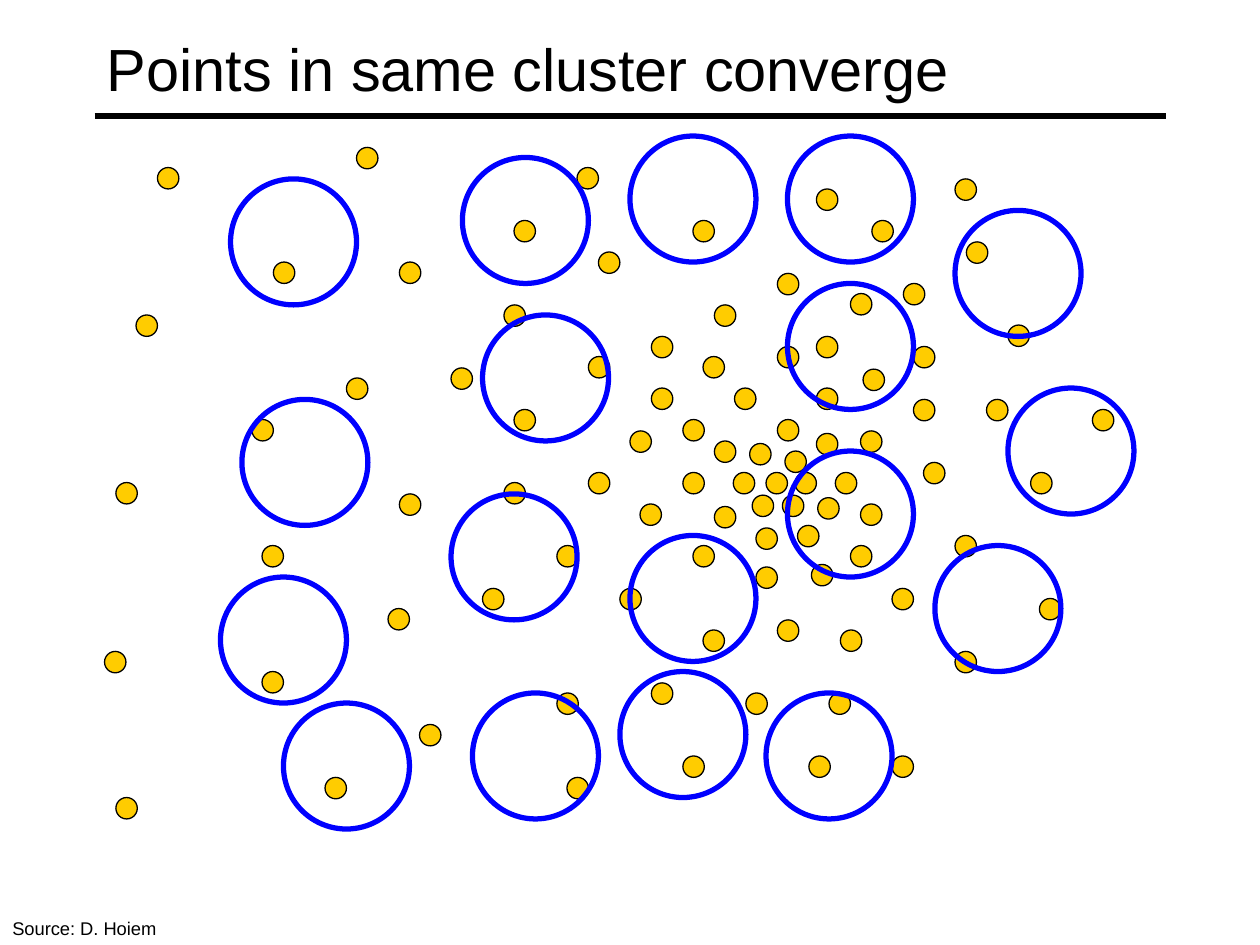
from lxml.etree import SubElement
from pptx import Presentation
from pptx.dml.color import RGBColor
from pptx.enum.shapes import MSO_CONNECTOR, MSO_SHAPE
from pptx.enum.text import MSO_ANCHOR
from pptx.oxml.ns import qn
from pptx.util import Inches, Pt

COLORS = {"ink": "000000", "point": "FFCC00", "window": "0000FF"}
FONT = "Arial"
POINT_SIZE = 0.17
WINDOW_SIZE = 1

# Top left corners of the data points, in inches
POINTS = [
    # Dense core
    (6.08, 3.75), (6.31, 3.75), (6.23, 3.58), (5.95, 3.52), (6.21, 3.93),
    (5.97, 3.93), (6.49, 3.95), (5.82, 3.75), (6.63, 3.75), (6.48, 3.44),
    (6.17, 3.33), (6.33, 4.17), (6, 4.19), (5.67, 4.02), (5.42, 3.75),
    (5.67, 3.5), (6.83, 4), (6.75, 4.33), (6.44, 4.48), (6, 4.5),
    # Ring around the core
    (5.5, 4.33), (5.08, 4), (5, 3.42), (5.42, 3.33), (5.83, 3.08),
    (6.48, 3.08), (6.17, 2.75), (5.17, 3.08), (5.58, 2.83), (6.17, 2.17),
    (5.67, 2.42), (6.48, 2.67), (6.48, 1.5), (6.75, 2.33), (6.85, 2.93),
    # Right side
    (6.83, 3.42), (7.25, 3.17), (7.25, 2.75), (7.17, 2.25), (6.92, 1.75),
    (7.58, 1.42), (7.67, 1.92), (8, 2.58), (7.33, 3.67), (7.83, 3.17),
    (8.67, 3.25), (7.58, 4.25), (8.18, 3.75), (7.08, 4.67), (8.25, 4.75),
    (7.58, 5.17),
    # Bottom
    (6.67, 5), (6.17, 4.92), (6.58, 5.5), (7.08, 6), (6.42, 6),
    (5.92, 5.5), (5.58, 5), (4.92, 4.67), (5.17, 5.42), (5.42, 6),
    (4.5, 6.17), (4.42, 5.5),
    # Middle left
    (3.83, 4.67), (4.42, 4.33), (4.67, 3.75), (4.08, 3.25), (4.67, 2.83),
    (5.17, 2.67), (4.75, 2), (5.5, 1.75), (4.58, 1.33), (4.08, 1.75),
    (4, 2.42), (3.58, 2.92), (4, 3.83),
    # Far left
    (3.17, 3.92), (3.08, 4.83), (3.33, 5.75), (2.58, 6.17), (2.08, 5.33),
    (2.08, 4.33), (2.75, 3), (3.17, 2.08), (2.17, 2.08), (2, 3.33),
    (0.83, 5.17), (0.92, 6.33), (0.92, 3.83), (1.08, 2.5), (1.25, 1.33),
    (2.83, 1.17),
]

# Top left corners of the search windows, in inches
WINDOWS = [
    (2.25, 5.58), (1.75, 4.58), (1.92, 3.17), (1.83, 1.42), (3.67, 1.25),
    (3.75, 5.5), (4.92, 5.33), (6.08, 5.5), (7.42, 4.33), (8, 3.08),
    (7.58, 1.67), (6.25, 1.08), (5, 1.08), (3.58, 3.92), (3.83, 2.5),
    (6.25, 2.25), (6.25, 3.58), (5, 4.25),
]


def color(name):
    return RGBColor.from_string(COLORS[name])


def add_circle(slide, left, top, size, line, width, fill=None):
    shape = slide.shapes.add_shape(
        MSO_SHAPE.OVAL, Inches(left), Inches(top), Inches(size), Inches(size))
    shape.shadow.inherit = False
    if fill:
        shape.fill.solid()
        shape.fill.fore_color.rgb = color(fill)
    else:
        shape.fill.background()
    shape.line.color.rgb = color(line)
    shape.line.width = Pt(width)


def add_rule(slide, left, right, top, width):
    rule = slide.shapes.add_connector(
        MSO_CONNECTOR.STRAIGHT,
        Inches(left), Inches(top), Inches(right), Inches(top))
    rule.line.color.rgb = color("ink")
    rule.line.width = Pt(width)
    SubElement(rule.element.spPr, qn("a:effectLst"))


def add_text(slide, text, left, top, width, height, size,
             anchor=MSO_ANCHOR.TOP):
    box = slide.shapes.add_textbox(
        Inches(left), Inches(top), Inches(width), Inches(height))
    frame = box.text_frame
    frame.word_wrap = True
    frame.vertical_anchor = anchor
    run = frame.paragraphs[0].add_run()
    run.text = text
    run.font.name = FONT
    run.font.size = Pt(size)
    run.font.color.rgb = color("ink")


def main():
    deck = Presentation()
    deck.slide_width, deck.slide_height = Inches(10), Inches(7.5)
    slide = deck.slides.add_slide(deck.slide_layouts[6])

    # Rule under the title
    add_rule(slide, 0.75, 9.25, 0.92, 3)

    # Data points, then the windows over them
    for left, top in POINTS:
        add_circle(slide, left, top, POINT_SIZE, "ink", 0.75, fill="point")
    for left, top in WINDOWS:
        add_circle(slide, left, top, WINDOW_SIZE, "window", 3)

    # Title and credit
    add_text(slide, "Points in same cluster converge", 0.75, 0.08, 8.5, 0.92,
             size=34, anchor=MSO_ANCHOR.MIDDLE)
    add_text(slide, "Source: D. Hoiem", 0, 7.23, 2.17, 0.28, size=10.5)

    deck.save("out.pptx")


if __name__ == "__main__":
    main()
